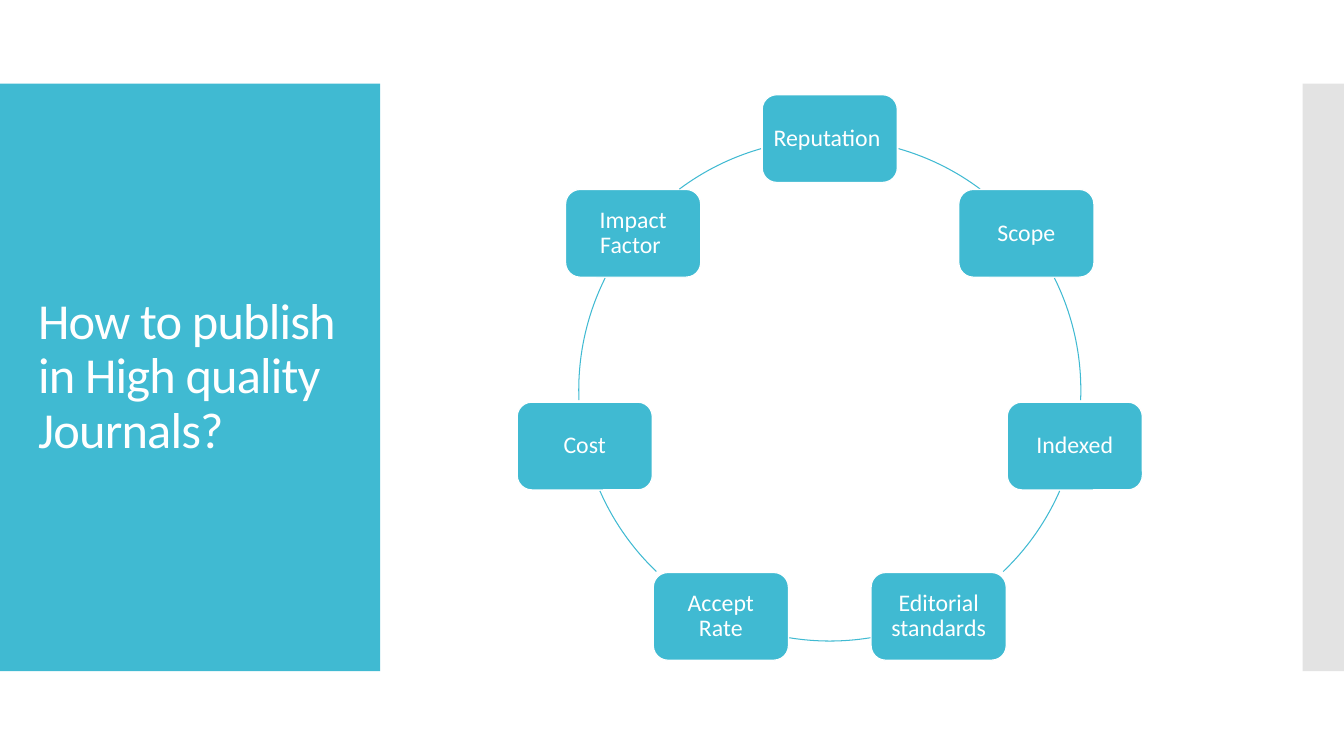
from math import cos, radians, sin

from lxml import etree
from pptx import Presentation
from pptx.dml.color import RGBColor
from pptx.enum.shapes import MSO_SHAPE
from pptx.enum.text import MSO_ANCHOR, PP_ALIGN
from pptx.oxml.ns import qn
from pptx.util import Pt

RECTANGLE, ROUNDED, ARC = MSO_SHAPE.RECTANGLE, MSO_SHAPE.ROUNDED_RECTANGLE, MSO_SHAPE.ARC
MIDDLE = MSO_ANCHOR.MIDDLE
LEFT, CENTER = PP_ALIGN.LEFT, PP_ALIGN.CENTER

PX = 9144
THEME = {
    "teal": RGBColor(0x40, 0xBA, 0xD2),
    "grey": RGBColor(0xC8, 0xC8, 0xC8),
    "white": RGBColor(0xFF, 0xFF, 0xFF),
    "font": "Calibri",
    "title_size": Pt(36),
    "node_size": Pt(17),
    "node_line": Pt(0.85),
    "arc_line": Pt(0.75),
}

CENTER_X, CENTER_Y, RADIUS = 823, 387, 249
NODE_WIDTH, NODE_HEIGHT = 134, 87
NODES = [
    ("Reputation ", 285.9, 306.8),
    ("Scope", 333.5, 2.3),
    ("Indexed", 23.7, 46.3),
    ("Editorial standards", 80.7, 99.3),
    ("Accept Rate", 133.7, 156.3),
    ("Cost", 177.7, 206.5),
    ("Impact Factor ", 233.2, 254.1),
]


def add_shape(kind, bounds, fill=None, line=None, width=None):
    shape = page.shapes.add_shape(kind, *(round(value) * PX for value in bounds))
    shape.shadow.inherit = False
    if fill is None:
        shape.fill.background()
    else:
        shape.fill.solid()
        shape.fill.fore_color.rgb = fill
    if line is None:
        shape.line.fill.background()
    else:
        shape.line.color.rgb = line
        shape.line.width = width
    return shape


def write(box, text, size, align, inset_x, inset_y):
    frame = box.text_frame
    frame_format = {
        "word_wrap": True,
        "vertical_anchor": MIDDLE,
        "margin_left": inset_x * PX,
        "margin_right": inset_x * PX,
        "margin_top": inset_y * PX,
        "margin_bottom": inset_y * PX,
    }
    for name, value in frame_format.items():
        setattr(frame, name, value)
    para = frame.paragraphs[0]
    para.alignment = align
    para.line_spacing = 0.9
    span = para.add_run()
    span.text = text
    for name, value in {"name": THEME["font"], "size": size}.items():
        setattr(span.font, name, value)
    span.font.color.rgb = THEME["white"]
    return span


deck = Presentation()
deck.slide_width, deck.slide_height = 1333 * PX, 750 * PX
page = deck.slides.add_slide(deck.slide_layouts[6])

add_shape(RECTANGLE, (0, 83, 377, 583), THEME["teal"])
side_bar = add_shape(RECTANGLE, (1292, 83, 41, 583), THEME["grey"])
side_color = side_bar.fill._xPr.find(qn("a:solidFill"))[0]
etree.SubElement(side_color, qn("a:alpha")).set("val", "50000")

title_box = page.shapes.add_textbox(28 * PX, 123 * PX, 322 * PX, 503 * PX)
title_span = write(title_box, "How to publish in High quality Journals?", THEME["title_size"], LEFT, 10, 5)
title_span.font._element.set("spc", "-60")

for index, (label, arc_start, arc_end) in enumerate(NODES):
    angle = radians(360 * index / len(NODES) - 90)
    left = CENTER_X + RADIUS * cos(angle) - NODE_WIDTH / 2
    top = CENTER_Y + RADIUS * sin(angle) - NODE_HEIGHT / 2
    node = add_shape(
        ROUNDED, (left, top, NODE_WIDTH, NODE_HEIGHT), THEME["teal"], THEME["white"], THEME["node_line"]
    )
    write(node, label, THEME["node_size"], CENTER, 6, 6)

    ring_bounds = (CENTER_X - RADIUS, CENTER_Y - RADIUS, 2 * RADIUS, 2 * RADIUS)
    arc = add_shape(ARC, ring_bounds, line=THEME["teal"], width=THEME["arc_line"])
    for position, degrees in enumerate((arc_start, arc_end)):
        arc.adjustments[position] = degrees * 0.6

deck.save("out.pptx")
